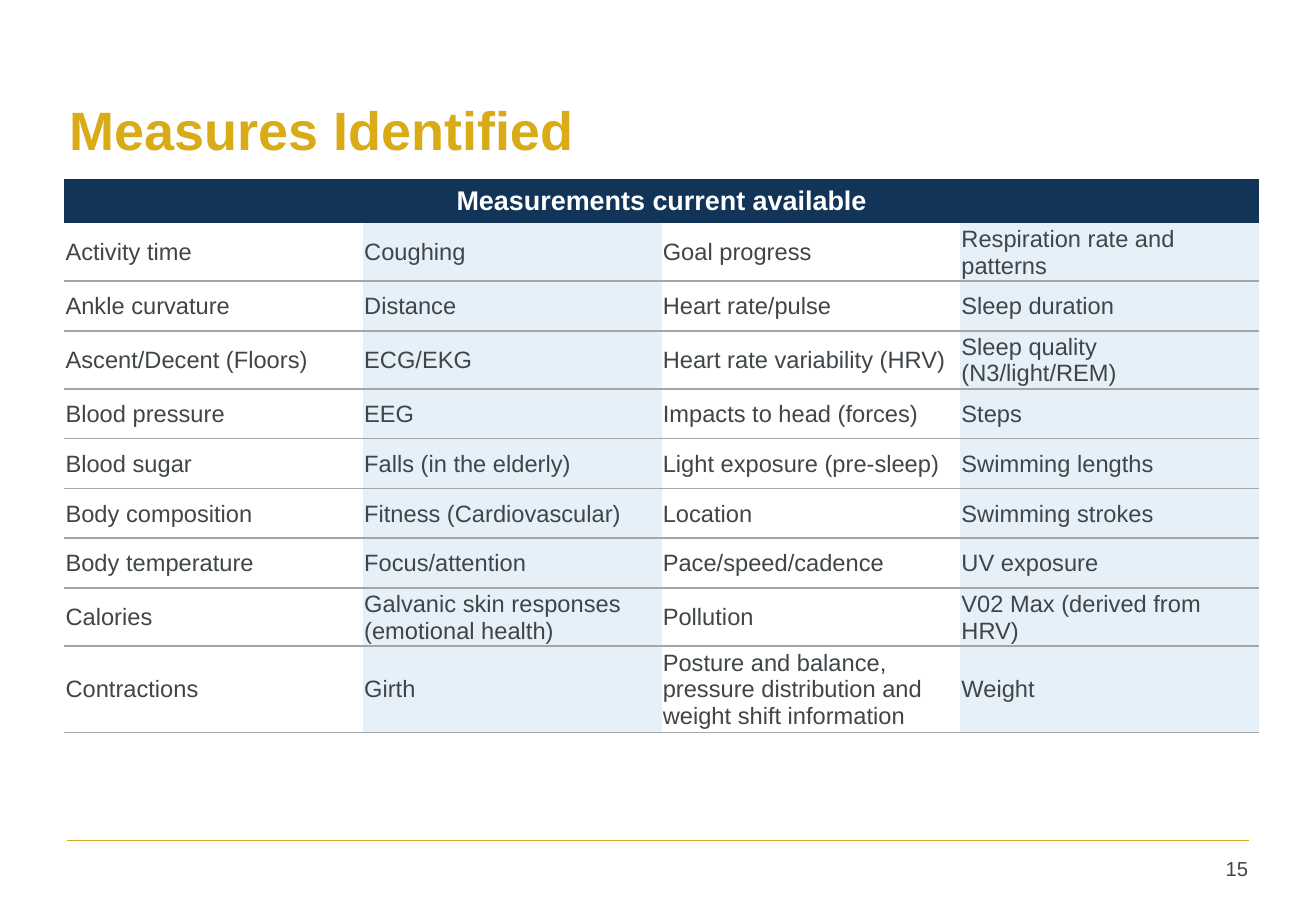
from dataclasses import dataclass

from lxml import etree
from pptx import Presentation
from pptx import util as u
from pptx.dml import color
from pptx.enum import shapes, text
from pptx.oxml import ns

Inches = u.Inches


@dataclass(frozen=True)
class Theme:
    font: str = "Arial"
    gold: str = "D9AB16"
    navy: str = "113458"
    ink: str = "3F4548"
    white: str = "FFFFFF"
    pale: str = "E5F0F9"
    rule: str = "A6A6A6"
    title: int = 32
    head: int = 16
    body: int = 14
    foot: int = 12


THEME = Theme()
PLAIN = "{2D5ABB26-0587-4C30-8999-92F81FD0307C}"
HEAD = "Measurements current available"
ROWS = [
    ["Activity time", "Coughing", "Goal progress", "Respiration rate and patterns"],
    ["Ankle curvature", "Distance", "Heart rate/pulse", "Sleep duration"],
    ["Ascent/Decent (Floors)", "ECG/EKG", "Heart rate variability (HRV)",
     "Sleep quality (N3/light/REM)"],
    ["Blood pressure", "EEG", "Impacts to head (forces)", "Steps"],
    ["Blood sugar", "Falls (in the elderly)", "Light exposure (pre-sleep)",
     "Swimming lengths"],
    ["Body composition", "Fitness (Cardiovascular)", "Location", "Swimming strokes"],
    ["Body temperature", "Focus/attention", "Pace/speed/cadence", "UV exposure"],
    ["Calories", "Galvanic skin responses (emotional health)", "Pollution",
     "V02 Max (derived from HRV)"],
    ["Contractions", "Girth",
     "Posture and balance, pressure distribution and weight shift information",
     "Weight"],
]
HEIGHTS = [0.36, 0.46, 0.41, 0.46, 0.41, 0.41, 0.41, 0.41, 0.46, 0.69]


def rgb(code):
    return color.RGBColor.from_string(code)


def write(frame, words, size, ink=THEME.ink, bold=False, align="LEFT"):
    para = frame.paragraphs[0]
    para.alignment = getattr(text.PP_ALIGN, align)
    run = para.add_run()
    run.text = words
    run.font.name = THEME.font
    run.font.size = u.Pt(size)
    run.font.bold = bold
    run.font.color.rgb = rgb(ink)


def add_label(slide, box, words, size, anchor="TOP", **look):
    frame = slide.shapes.add_textbox(*map(Inches, box)).text_frame
    frame.word_wrap = True
    frame.vertical_anchor = getattr(text.MSO_ANCHOR, anchor)
    write(frame, words, size, **look)


def add_edge(cell, side):
    props = cell._tc.get_or_add_tcPr()
    line = etree.SubElement(props, ns.qn(f"a:ln{side}"), w=str(u.Pt(1)))
    fill = etree.SubElement(line, ns.qn("a:solidFill"))
    etree.SubElement(fill, ns.qn("a:srgbClr"), val=THEME.rule)


def paint(cell, code):
    cell.fill.solid()
    cell.fill.fore_color.rgb = rgb(code)
    cell.vertical_anchor = text.MSO_ANCHOR.MIDDLE


def add_grid(slide, box):
    left, top, width = box
    count = len(ROWS[0])
    table = slide.shapes.add_table(
        len(HEIGHTS), count, *map(Inches, (left, top, width, sum(HEIGHTS)))).table
    table._tbl.tblPr.find(ns.qn("a:tableStyleId")).text = PLAIN
    table.horz_banding = False
    for col in table.columns:
        col.width = Inches(width / count)
    for row, height in zip(table.rows, HEIGHTS):
        row.height = Inches(height)
    head = table.cell(0, 0)
    head.merge(table.cell(0, count - 1))
    paint(head, THEME.navy)
    write(head.text_frame, HEAD, THEME.head, ink=THEME.white, bold=True, align="CENTER")
    for r, names in enumerate(ROWS, 1):
        for c, name in enumerate(names):
            cell = table.cell(r, c)
            cell.margin_left = cell.margin_right = cell.margin_top = Inches(0.01)
            cell.margin_bottom = 0
            if r > 1:
                add_edge(cell, "T")
            add_edge(cell, "B")
            paint(cell, THEME.pale if c % 2 else THEME.white)
            write(cell.text_frame, name, THEME.body)


def add_foot(slide, box, number):
    left, top, width = box
    right = left + width
    line = slide.shapes.add_connector(
        shapes.MSO_CONNECTOR.STRAIGHT, *map(Inches, (left, top, right, top)))
    line.line.color.rgb = rgb(THEME.gold)
    line.line.width = u.Pt(1)
    etree.SubElement(line._element.spPr, ns.qn("a:effectLst"))
    add_label(slide, (right - 0.68, top + 0.08, 0.77, 0.37), number,
              THEME.foot, align="RIGHT")


def main():
    deck = Presentation()
    deck.slide_width, deck.slide_height = Inches(10.83), Inches(7.5)
    slide = deck.slides.add_slide(deck.slide_layouts[6])
    add_foot(slide, (0.55, 6.92, 9.73), "15")
    add_label(slide, (0.47, 0.44, 9.82, 1.25), "Measures Identified", THEME.title,
              anchor="MIDDLE", ink=THEME.gold, bold=True)
    add_grid(slide, (0.53, 1.47, 9.83))
    deck.save("out.pptx")


if __name__ == "__main__":
    main()
